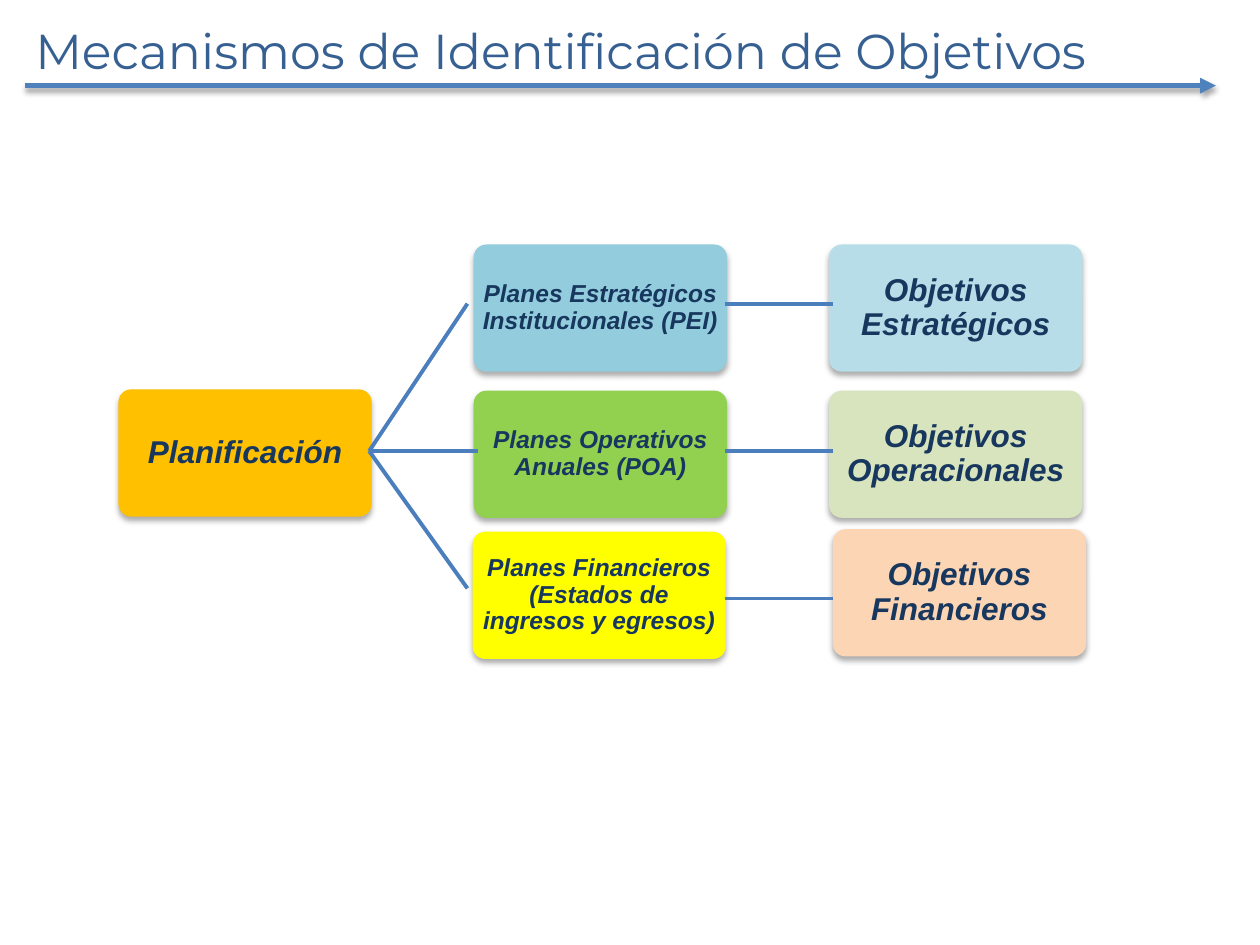
from lxml import etree
from pptx import Presentation, util as u
from pptx.dml.color import RGBColor
from pptx.enum import shapes, text
from pptx.oxml.ns import qn

# Content: text, size, fill, left, top
TITLE = "Mecanismos de Identificación de Objetivos"
WIDE, HIGH = 2.01, 1.01
COLS = 0.94, 3.76, 6.58
ROWS = 1.94, 3.1, 4.22
BOXES = [
    ("Planificación", 18, "FFC000", COLS[0], 3.09),
    ("Planes Estratégicos Institucionales (PEI)", 14, "93CDDD", COLS[1], ROWS[0]),
    ("Objetivos Estratégicos", 18, "B7DEE8", COLS[2], ROWS[0]),
    ("Planes Operativos Anuales (POA)", 14, "92D050", COLS[1], ROWS[1]),
    ("Objetivos Operacionales", 18, "D7E4BD", COLS[2], ROWS[1]),
    ("Planes Financieros (Estados de ingresos y egresos)", 14, "FFFF00", 3.75, ROWS[2]),
    ("Objetivos Financieros", 18, "FCD5B5", 6.61, 4.2),
]
ROOT = 2.93, 3.58
FAN = [(3.71, 2.41), (3.79, 3.58), (3.71, 4.67)]
LINKS = 2.41, 3.58, 4.75
LEFT, RIGHT = 5.75, 6.61


def color(code):
    return RGBColor.from_string(code)


def shade(item, alpha, blur, dist):
    """Give a shape or line a soft shadow straight below it."""
    props = item._element.spPr
    for old in props.findall(qn("a:effectLst")):
        props.remove(old)
    fx = etree.SubElement(props, qn("a:effectLst"))
    if alpha:
        drop = etree.SubElement(fx, qn("a:outerShdw"), blurRad=str(u.Pt(blur)),
                                dist=str(u.Pt(dist)), dir="5400000", rotWithShape="0")
        tint = etree.SubElement(drop, qn("a:srgbClr"), val="000000")
        etree.SubElement(tint, qn("a:alpha"), val=str(alpha * 1000))


def write(par, words, size, face, code, bold=False):
    run = par.add_run()
    run.text = words
    font = run.font
    font.size, font.name = u.Pt(size), face
    font.bold = font.italic = bold
    font.color.rgb = color(code)


def box(slide, words, size, fill, left, top):
    card = slide.shapes.add_shape(shapes.MSO_SHAPE.ROUNDED_RECTANGLE,
                                  *map(u.Inches, (left, top, WIDE, HIGH)))
    card.adjustments[0] = 0.1
    card.fill.solid()
    card.fill.fore_color.rgb = color(fill)
    card.line.fill.background()
    shade(card, 32, 3.5, 2.2)
    frame = card.text_frame
    frame.word_wrap = True
    frame.vertical_anchor = text.MSO_ANCHOR.MIDDLE
    frame.margin_left = frame.margin_right = u.Inches(0.01)
    frame.margin_top = frame.margin_bottom = u.Inches(0.01)
    par = frame.paragraphs[0]
    par.alignment = text.PP_ALIGN.CENTER
    par.line_spacing = 0.9
    write(par, words, size, "Arial", "17375E", True)


def line(slide, start, end, code="4B7EBC", width=2.25):
    link = slide.shapes.add_connector(shapes.MSO_CONNECTOR.STRAIGHT,
                                      *map(u.Inches, start + end))
    link.line.color.rgb = color(code)
    link.line.width = u.Pt(width)
    shade(link, 0, 0, 0)
    return link


def main():
    deck = Presentation()
    deck.slide_width, deck.slide_height = u.Inches(10), u.Inches(7.5)
    slide = deck.slides.add_slide(deck.slide_layouts[5])

    # Title and the arrow under it
    head = slide.shapes.title
    head.left, head.top, head.width, head.height = map(u.Inches, (0.18, 0.11, 9.45, 0.57))
    frame = head.text_frame
    frame.word_wrap = True
    frame.auto_size = text.MSO_AUTO_SIZE.NONE
    frame.vertical_anchor = text.MSO_ANCHOR.TOP
    frame.paragraphs[0].alignment = text.PP_ALIGN.LEFT
    write(frame.paragraphs[0], TITLE, 28, "Montserrat", "376092")
    rule = line(slide, (0.2, 0.68), (9.65, 0.68), "4F81BD", 3)
    etree.SubElement(rule.line._get_or_add_ln(), qn("a:tailEnd"), type="triangle")
    shade(rule, 35, 3.1, 1.8)

    # Boxes
    for item in BOXES:
        box(slide, *item)

    # Lines from the root to the plans, and from each plan to its goals
    for end in FAN:
        line(slide, ROOT, end)
    for y in LINKS:
        line(slide, (LEFT, y), (RIGHT, y))

    deck.save("out.pptx")


if __name__ == "__main__":
    main()
